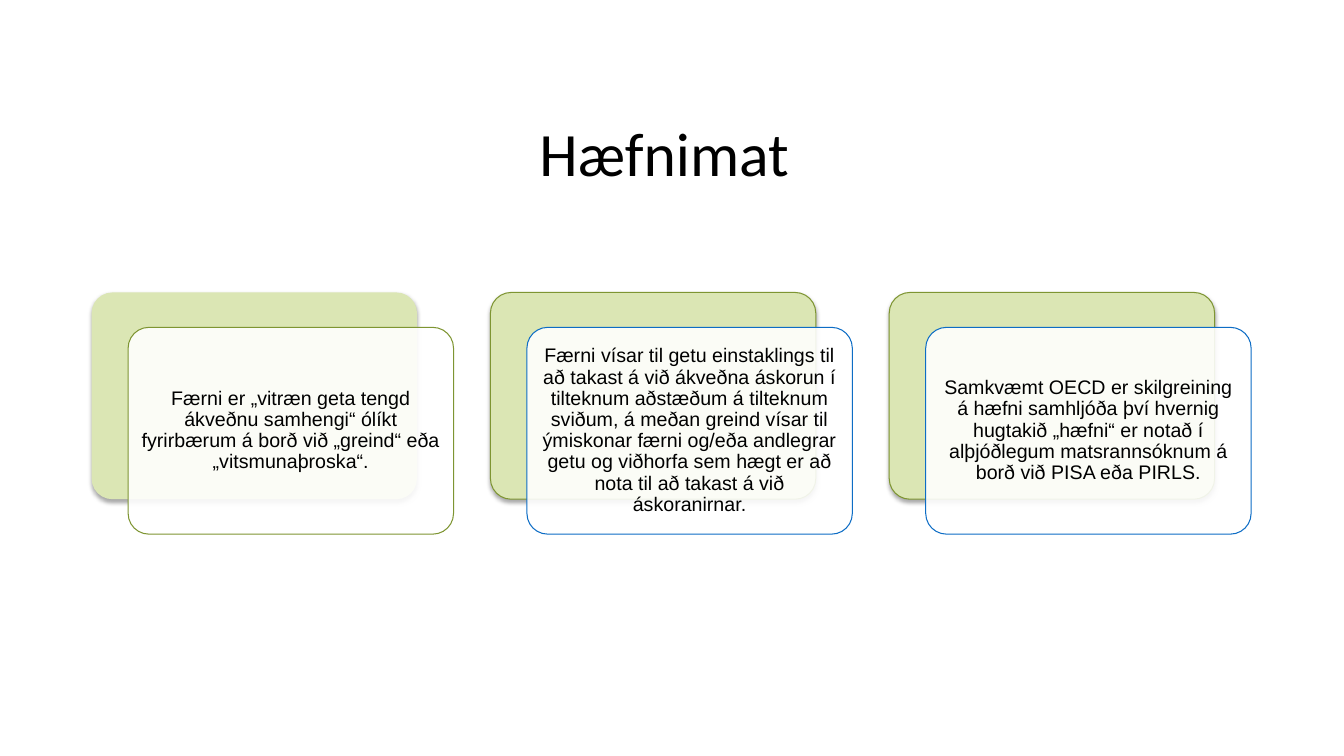
from dataclasses import dataclass
from typing import Optional

import pptx
import pptx.dml.color
import pptx.enum.shapes
import pptx.enum.text
import pptx.oxml
import pptx.oxml.ns
import pptx.util
from lxml import etree

Cm = pptx.util.Cm
Pt = pptx.util.Pt
RGBColor = pptx.dml.color.RGBColor
qn = pptx.oxml.ns.qn

BLACK = RGBColor(0x00, 0x00, 0x00)
WHITE = RGBColor(0xFF, 0xFF, 0xFF)
PALE_GREEN = RGBColor(0xDB, 0xE6, 0xB4)
GREEN = RGBColor(0x7E, 0x95, 0x32)
BLUE = RGBColor(0x0D, 0x6D, 0xC5)

# Card grid, in centimetres
CARD_LEFT, CARD_TOP = 2.31, 7.37
CARD_WIDTH, CARD_HEIGHT = 8.2, 5.21
CARD_PITCH = 10.05
FRONT_SHIFT_X, FRONT_SHIFT_Y = 0.92, 0.88


@dataclass
class Card:
    text: str
    back_line: Optional[RGBColor]
    front_line: RGBColor


CARDS = [
    Card("Færni er „vitræn geta tengd ákveðnu samhengi“ ólíkt fyrirbærum "
         "á borð við „greind“ eða „vitsmunaþroska“.", None, GREEN),
    Card("Færni vísar til getu einstaklings til að takast á við ákveðna "
         "áskorun í tilteknum aðstæðum á tilteknum sviðum, á meðan greind "
         "vísar til ýmiskonar færni og/eða andlegrar getu og viðhorfa sem "
         "hægt er að nota til að takast á við áskoranirnar.", GREEN, BLUE),
    Card("Samkvæmt OECD er skilgreining á hæfni samhljóða því hvernig "
         "hugtakið „hæfni“ er notað í alþjóðlegum matsrannsóknum á borð "
         "við PISA eða PIRLS.", GREEN, BLUE),
]


def write_text(shape, text: str, font_name: str, size: float,
               inset_x: float, inset_y: float) -> None:
    frame = shape.text_frame
    frame.word_wrap = True
    frame.vertical_anchor = pptx.enum.text.MSO_ANCHOR.MIDDLE
    frame.margin_left = frame.margin_right = Cm(inset_x)
    frame.margin_top = frame.margin_bottom = Cm(inset_y)
    paragraph = frame.paragraphs[0]
    paragraph.alignment = pptx.enum.text.PP_ALIGN.CENTER
    paragraph.line_spacing = 0.9
    run = paragraph.add_run()
    run.text = text
    run.font.name = font_name
    run.font.size = Pt(size)
    run.font.color.rgb = BLACK


def add_panel(slide, left: float, top: float, fill: RGBColor,
              line: Optional[RGBColor]):
    shape = slide.shapes.add_shape(
        pptx.enum.shapes.MSO_SHAPE.ROUNDED_RECTANGLE,
        Cm(left), Cm(top), Cm(CARD_WIDTH), Cm(CARD_HEIGHT))
    shape.adjustments[0] = 0.1
    shape.shadow.inherit = False
    shape.fill.solid()
    shape.fill.fore_color.rgb = fill
    if line is None:
        shape.line.fill.background()
    else:
        shape.line.color.rgb = line
        shape.line.width = Pt(0.75)
    return shape


def add_alpha(color_element, percent: int) -> None:
    etree.SubElement(color_element, qn("a:alpha"), val=str(percent * 1000))


def add_shadow(shape) -> None:
    effects = shape._element.spPr.find(qn("a:effectLst"))
    shadow = etree.SubElement(
        effects, qn("a:outerShdw"), blurRad=str(Pt(3.1)), dist=str(Pt(1.8)),
        dir="5400000", rotWithShape="0")
    color = etree.SubElement(shadow, qn("a:srgbClr"), val=str(BLACK))
    add_alpha(color, 35)


def add_card(slide, card: Card, left: float) -> None:
    back = add_panel(slide, left, CARD_TOP, PALE_GREEN, card.back_line)
    add_shadow(back)
    front = add_panel(slide, left + FRONT_SHIFT_X, CARD_TOP + FRONT_SHIFT_Y,
                      WHITE, card.front_line)
    add_alpha(front._element.spPr.find(qn("a:solidFill"))[0], 89)
    write_text(front, card.text, "Arial", 14, 0.15, 0.15)


def main() -> None:
    presentation = pptx.Presentation()
    presentation.slide_width = Cm(33.87)
    presentation.slide_height = Cm(19.05)
    slide = presentation.slides.add_slide(presentation.slide_layouts[6])

    # Title
    title = slide.shapes.add_textbox(Cm(2.31), Cm(2.31), Cm(29.21), Cm(3.28))
    write_text(title, "Hæfnimat ", "Calibri", 44, 0.25, 0.13)

    # Three overlapping cards
    for index, card in enumerate(CARDS):
        add_card(slide, card, CARD_LEFT + index * CARD_PITCH)

    presentation.save("out.pptx")


if __name__ == "__main__":
    main()
